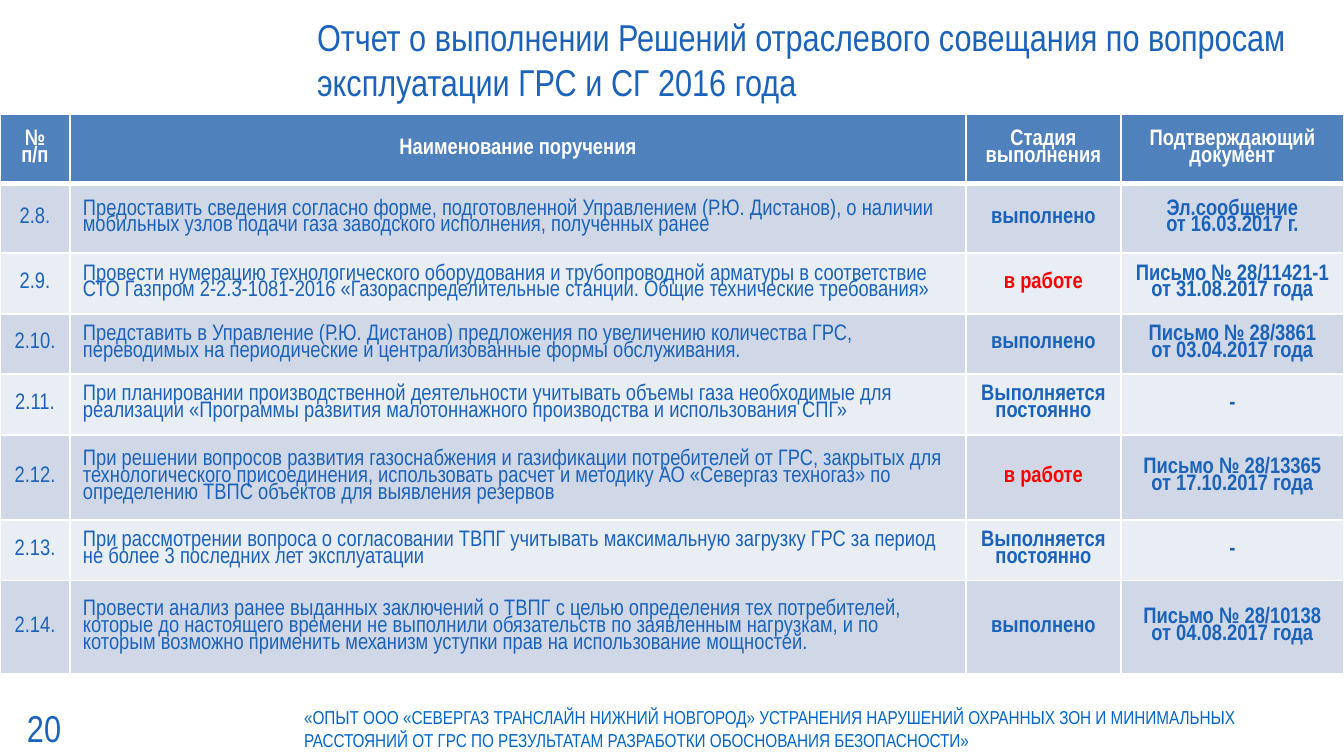
import pptx
import pptx.util
import pptx.dml.color
import pptx.enum.text
import pptx.oxml
import pptx.oxml.ns

RGBColor = pptx.dml.color.RGBColor
PP_ALIGN = pptx.enum.text.PP_ALIGN
MIDDLE = pptx.enum.text.MSO_ANCHOR.MIDDLE

PX = 914400 / 134.4
FONT = "Arial Narrow"
BLUE = RGBColor(0x1A, 0x62, 0xBA)
FOOTER_BLUE = RGBColor(0x00, 0x66, 0xCC)
RED = RGBColor(0xFF, 0x00, 0x00)
WHITE = RGBColor(0xFF, 0xFF, 0xFF)
HEADER_FILL = RGBColor(0x4F, 0x81, 0xBD)
BAND_FILLS = [RGBColor(0xE9, 0xED, 0xF4), RGBColor(0xD0, 0xD8, 0xE8)]

COLUMN_WIDTHS = [70, 896, 155, 223]
ROW_HEIGHTS = [70, 69, 61, 60, 61, 85, 61, 93]
ROWS = [
    ("№ п/п", "Наименование поручения", "Стадия выполнения", "Подтверждающий документ"),
    ("2.8.",
     "Предоставить сведения согласно форме, подготовленной Управлением (Р.Ю. Дистанов), "
     "о наличии мобильных узлов подачи газа заводского исполнения, полученных ранее",
     "выполнено", "Эл.сообщение\nот 16.03.2017 г."),
    ("2.9.",
     "Провести нумерацию технологического оборудования и трубопроводной арматуры в соответствие "
     "СТО Газпром 2-2.3-1081-2016 «Газораспределительные станции. Общие технические требования»",
     "в работе", "Письмо № 28/11421-1\nот 31.08.2017 года"),
    ("2.10.",
     "Представить в Управление (Р.Ю. Дистанов) предложения по увеличению количества ГРС, "
     "переводимых на периодические и централизованные формы обслуживания.",
     "выполнено", "Письмо № 28/3861\nот 03.04.2017 года"),
    ("2.11.",
     "При планировании производственной деятельности учитывать объемы газа необходимые для "
     "реализации «Программы развития малотоннажного производства и использования СПГ»",
     "Выполняется постоянно", "-"),
    ("2.12.",
     "При решении вопросов развития газоснабжения и газификации потребителей от ГРС, закрытых для "
     "технологического присоединения, использовать расчет и методику АО «Севергаз техногаз» по "
     "определению ТВПС объектов для выявления резервов",
     "в работе", "Письмо № 28/13365\nот 17.10.2017 года"),
    ("2.13.",
     "При рассмотрении вопроса о согласовании ТВПГ учитывать максимальную загрузку ГРС за период "
     "не более 3 последних лет эксплуатации",
     "Выполняется постоянно", "-"),
    ("2.14.",
     "Провести анализ ранее выданных заключений о ТВПГ с целью определения тех потребителей, "
     "которые до настоящего времени не выполнили обязательств по заявленным нагрузкам, и по "
     "которым возможно применить механизм уступки прав на использование мощностей.",
     "выполнено", "Письмо № 28/10138\nот 04.08.2017 года"),
]


def px(length):
    return pptx.util.Emu(round(length * PX))


def format_font(font, size, color, bold=False):
    font.name = FONT
    font.size = pptx.util.Pt(size)
    font.color.rgb = color
    font.bold = bold


presentation = pptx.Presentation()
presentation.slide_width = px(1344)
presentation.slide_height = px(756)
slide = presentation.slides.add_slide(presentation.slide_layouts[6])

# Title, slide number and footer: box, left inset, vertical inset, anchor, size, colour
text_boxes = [
    ("Отчет о выполнении Решений отраслевого совещания по вопросам эксплуатации ГРС и СГ 2016 года",
     (304, 7, 1027, 104), 13, 7, MIDDLE, 20, BLUE),
    ("20", (0, 699, 281, 57), 27, 0, MIDDLE, 20, BLUE),
    ("«ОПЫТ ООО «СЕВЕРГАЗ ТРАНСЛАЙН НИЖНИЙ НОВГОРОД» УСТРАНЕНИЯ НАРУШЕНИЙ ОХРАННЫХ ЗОН И МИНИМАЛЬНЫХ "
     "РАССТОЯНИЙ ОТ ГРС ПО РЕЗУЛЬТАТАМ РАЗРАБОТКИ ОБОСНОВАНИЯ БЕЗОПАСНОСТИ»",
     (291, 699, 1038, 59), 13, 7, pptx.enum.text.MSO_ANCHOR.TOP, 10, FOOTER_BLUE),
]
for text, box, left_inset, vertical_inset, anchor, size, color in text_boxes:
    text_frame = slide.shapes.add_textbox(*map(px, box)).text_frame
    text_frame.word_wrap = True
    text_frame.vertical_anchor = anchor
    text_frame.margin_left = px(left_inset)
    text_frame.margin_top = text_frame.margin_bottom = px(vertical_inset)
    text_frame.text = text
    format_font(text_frame.paragraphs[0].runs[0].font, size, color)

table = slide.shapes.add_table(
    len(ROWS), len(COLUMN_WIDTHS), 0, px(114), px(sum(COLUMN_WIDTHS)), px(sum(ROW_HEIGHTS))
).table
for column, width in zip(table.columns, COLUMN_WIDTHS):
    column.width = px(width)
for row, height in zip(table.rows, ROW_HEIGHTS):
    row.height = px(height)

for row_index, texts in enumerate(ROWS):
    is_header = row_index == 0
    for column_index, text in enumerate(texts):
        cell = table.cell(row_index, column_index)
        cell.vertical_anchor = MIDDLE
        cell.margin_left = cell.margin_right = px(13)
        cell.margin_top = cell.margin_bottom = px(5)
        cell.text_frame.text = text

        color = WHITE if is_header else RED if text == "в работе" else BLUE
        is_description = column_index == 1 and not is_header
        for paragraph in cell.text_frame.paragraphs:
            paragraph.alignment = PP_ALIGN.LEFT if is_description else PP_ALIGN.CENTER
            paragraph.line_spacing = 0.8
            format_font(paragraph.runs[0].font, 12, color, is_header or column_index >= 2)

        # Borders precede the fill in the cell properties
        cell_properties = cell._tc.get_or_add_tcPr()
        for side in ("L", "R", "T", "B"):
            thick = (side == "B" and is_header) or (side == "T" and row_index == 1)
            cell_properties.append(pptx.oxml.parse_xml(
                f'<a:ln{side} {pptx.oxml.ns.nsdecls("a")} w="{pptx.util.Pt(3 if thick else 1)}">'
                f'<a:solidFill><a:srgbClr val="{WHITE}"/></a:solidFill></a:ln{side}>'
            ))
        cell.fill.solid()
        cell.fill.fore_color.rgb = HEADER_FILL if is_header else BAND_FILLS[row_index % 2]

presentation.save("out.pptx")
